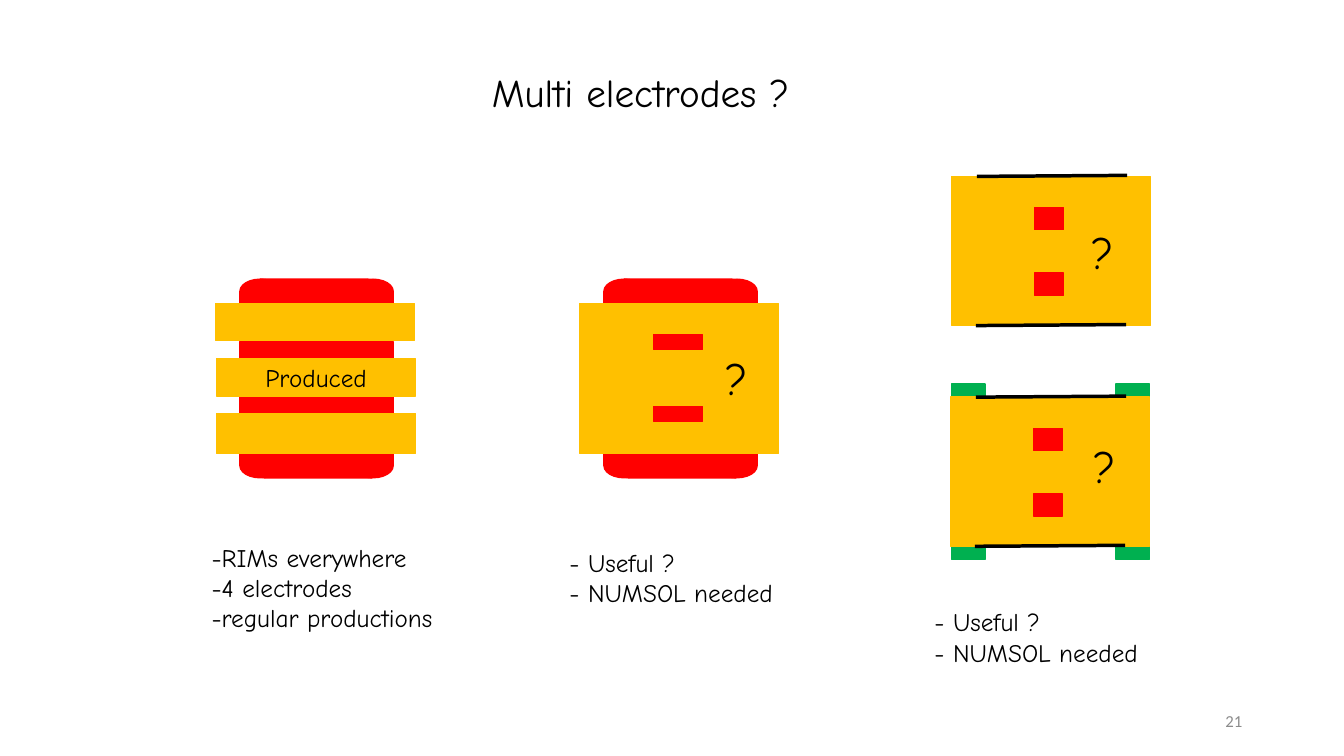
from lxml import etree
from pptx import Presentation
from pptx.dml.color import RGBColor
from pptx.enum.shapes import MSO_CONNECTOR, MSO_SHAPE as SHAPE
from pptx.enum.text import MSO_ANCHOR as ANCHOR, PP_ALIGN as ALIGN
from pptx.oxml.ns import qn
from pptx.util import Inches, Pt

COLORS = {
    "red": "FF0000",
    "gold": "FFC000",
    "green": "00B050",
    "black": "000000",
    "gray": "8C8C8C",
}

deck = Presentation()
deck.slide_width = Inches(13.33)
deck.slide_height = Inches(7.5)
slide = deck.slides.add_slide(deck.slide_layouts[6])


def add_part(color, left, top, width, height, kind=SHAPE.RECTANGLE, rotation=0):
    part = slide.shapes.add_shape(
        kind, Inches(left), Inches(top), Inches(width), Inches(height)
    )
    part.shadow.inherit = False
    part.rotation = rotation
    part.fill.solid()
    part.fill.fore_color.rgb = RGBColor.from_string(COLORS[color])
    part.line.color.rgb = RGBColor.from_string(COLORS[color])
    part.line.width = Pt(1)
    return part


def write(frame, lines, size, font="Comic Neue", color="black", align=ALIGN.LEFT):
    frame.word_wrap = True
    for index, line in enumerate(lines):
        paragraph = frame.add_paragraph() if index else frame.paragraphs[0]
        paragraph.text = line
        paragraph.alignment = align
        paragraph.font.size = Pt(size)
        paragraph.font.name = font
        paragraph.font.color.rgb = RGBColor.from_string(COLORS[color])


for cap_left in (2.38, 5.99):
    for cap_top, skirt_top, rotation in ((2.77, 2.89, 0), (4.5, 4.5, 180)):
        add_part("red", cap_left + 0.2, cap_top, 1.11, 0.24,
                 SHAPE.ROUND_1_RECTANGLE, rotation)
        for corner in (0, 1.12):
            add_part("red", cap_left + corner, cap_top, 0.4, 0.24, SHAPE.OVAL)
        for corner in (0, 1.19):
            add_part("red", cap_left + corner, skirt_top, 0.33, 0.12)

for gap_top in (3.39, 3.93):
    add_part("red", 2.38, gap_top, 1.52, 0.17)
add_part("gold", 2.14, 3.01, 1.97, 0.37)
produced = add_part("gold", 2.15, 3.56, 1.97, 0.37)
add_part("gold", 2.15, 4.1, 1.97, 0.4)
produced.text_frame.vertical_anchor = ANCHOR.MIDDLE
write(produced.text_frame, ["Produced"], 18, align=ALIGN.CENTER)

add_part("gold", 5.75, 3.01, 1.97, 1.49)
for slot_top in (3.32, 4.03):
    add_part("red", 6.48, slot_top, 0.49, 0.15)

for pad_top in (3.81, 5.38):
    for pad_left in (9.44, 11.07):
        add_part("green", pad_left, pad_top, 0.33, 0.17)

for plate_left, plate_top in ((9.44, 1.75), (9.43, 3.94)):
    add_part("gold", plate_left, plate_top, 1.97, 1.48)
    for edge_left, edge_top in ((0.25, 0), (0.24, 1.48)):
        start, level = plate_left + edge_left, plate_top + edge_top
        edge = slide.shapes.add_connector(
            MSO_CONNECTOR.STRAIGHT, Inches(start), Inches(level),
            Inches(start + 1.49), Inches(level - 0.01),
        )
        edge.line.color.rgb = RGBColor.from_string(COLORS["black"])
        edge.line.width = Pt(2.5)
        etree.SubElement(edge._element.spPr, qn("a:effectLst"))
    for window_top in (0.31, 0.96):
        add_part("red", plate_left + 0.82, plate_top + window_top, 0.29, 0.22)

simulation_notes = ["- Useful ?", "- NUMSOL needed"]
production_notes = ["-RIMs everywhere", "-4 electrodes", "-regular productions"]
for left, top, width, height, size, lines in (
    (4.78, 0.63, 3.56, 0.57, 28, ["Multi electrodes ?"]),
    (2, 5.33, 2.68, 1.01, 18, production_notes),
    (5.55, 5.38, 2.47, 0.71, 18, simulation_notes),
    (9.17, 5.97, 2.4, 0.71, 18, simulation_notes),
    (7.1, 3.43, 0.83, 0.64, 32, ["?"]),
    (10.73, 2.18, 0.83, 0.64, 32, ["?"]),
    (10.75, 4.3, 0.83, 0.64, 32, ["?"]),
):
    note = slide.shapes.add_textbox(
        Inches(left), Inches(top), Inches(width), Inches(height)
    )
    write(note.text_frame, lines, size)

page_number = slide.shapes.add_textbox(
    Inches(9.42), Inches(6.95), Inches(3), Inches(0.4)
)
page_number.text_frame.vertical_anchor = ANCHOR.MIDDLE
write(page_number.text_frame, ["21"], 12, "Calibri", "gray", ALIGN.RIGHT)

deck.save("out.pptx")
